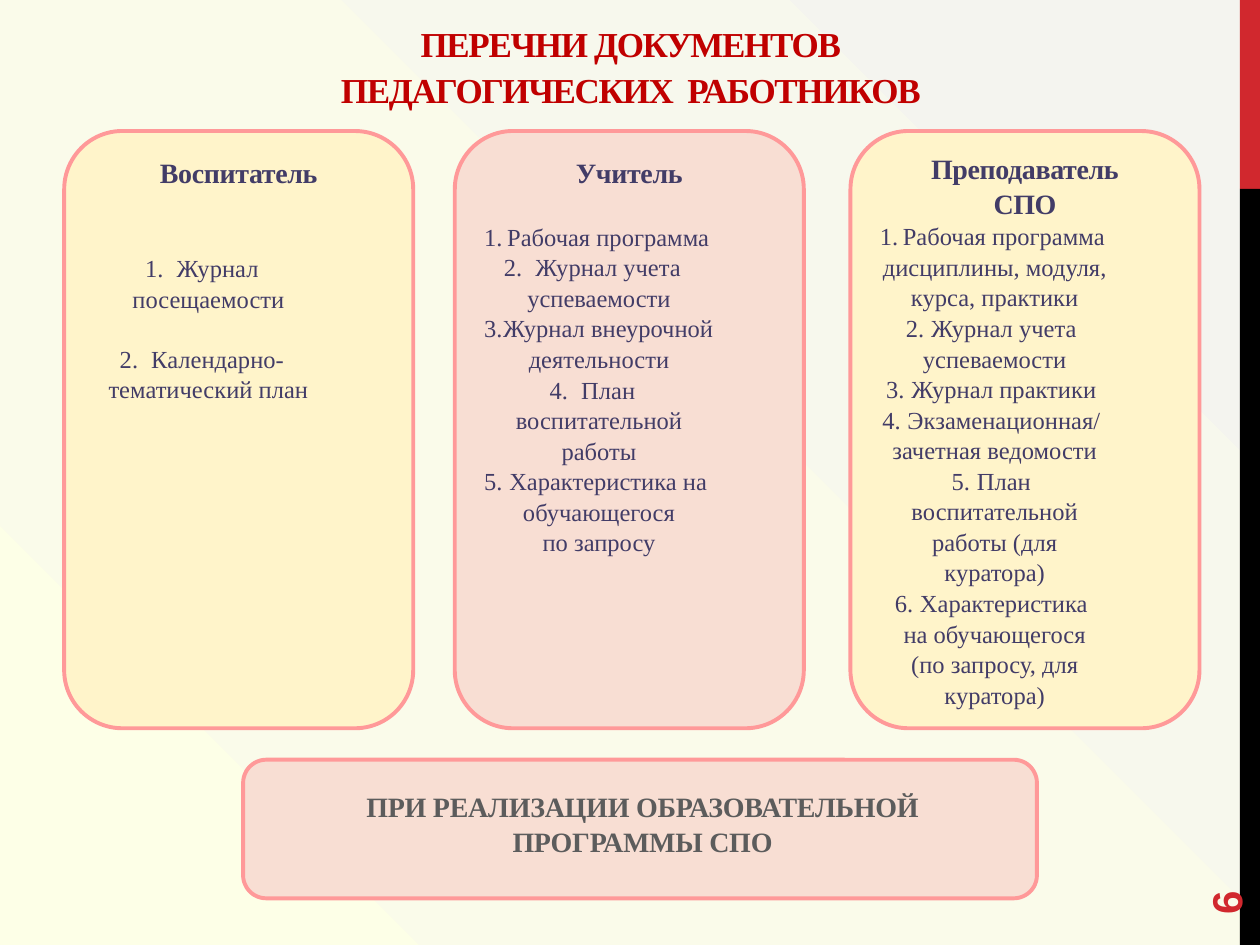
from lxml import etree
from pptx import Presentation
from pptx.dml.color import RGBColor as Color
from pptx.enum.shapes import MSO_SHAPE as Shape
from pptx.enum.text import MSO_ANCHOR as Anchor, PP_ALIGN as Align
from pptx.oxml.ns import qn
from pptx.util import Inches, Pt

# Content
TITLE = ["ПЕРЕЧНИ ДОКУМЕНТОВ", "ПЕДАГОГИЧЕСКИХ  РАБОТНИКОВ"]
CARDS = [
    dict(left=0.51, fill="yellow", anchor=Anchor.TOP, heading=["Воспитатель"],
         gap=36, item_gap=16.8, hanging=0.25,
         items=["Журнал посещаемости", "Календарно-тематический план"], tail=[]),
    dict(left=3.61, fill="pink", anchor=Anchor.TOP, heading=["Учитель"],
         gap=18, item_gap=0, hanging=0.25,
         items=["Рабочая программа", "Журнал учета успеваемости",
                "Журнал внеурочной деятельности", "План воспитательной работы",
                "Характеристика на обучающегося"],
         tail=["по запросу"]),
    dict(left=6.75, fill="yellow", anchor=Anchor.MIDDLE, heading=["Преподаватель", "СПО"],
         gap=0, item_gap=0, hanging=0.2,
         items=["Рабочая программа дисциплины, модуля, курса, практики",
                "Журнал учета успеваемости", "Журнал практики",
                "Экзаменационная/ зачетная ведомости",
                "План воспитательной работы (для куратора)", "Характеристика"],
         tail=["на обучающегося", "(по запросу, для куратора)"]),
]
FOOTER = "ПРИ РЕАЛИЗАЦИИ ОБРАЗОВАТЕЛЬНОЙ ПРОГРАММЫ СПО"
PAGE_NUMBER = "6"

# Text styles: font, size, colour, bold, letter spacing in points
THEME = dict(
    colors=dict(yellow="FFF4CA", pink="F8DED3", outline="FF9999", red="D1282E", black="000000"),
    background=[(0, "FDFFE7"), (38, "FAFBEA"), (99, "F4F4EF")],
    title=("Times New Roman", 20, "C00000", True, -0.8),
    heading=("Times New Roman", 16, "423C67", True, -0.2),
    item=("Times New Roman", 14, "423C67", False, 0),
    footer=("Times New Roman", 16, "5C5C5C", True, -0.1),
    number=("Arial", 24, "D1282E", True, 0),
)
LINE_SPACING = 1.04
CARD_TOP, CARD_WIDTH, CARD_HEIGHT = 1.04, 2.77, 4.74
ITEM_RIGHT_MARGIN, ITEM_TAB = 0.48, 0.57


def set_background(slide):
    slide.background.fill.solid()
    solid = slide.background._cSld.find(".//" + qn("a:solidFill"))
    gradient = etree.Element(qn("a:gradFill"), rotWithShape="1")
    stops = etree.SubElement(gradient, qn("a:gsLst"))
    for position, color in THEME["background"]:
        stop = etree.SubElement(stops, qn("a:gs"), pos=str(position * 1000))
        etree.SubElement(stop, qn("a:srgbClr"), val=color)
    circle = etree.SubElement(gradient, qn("a:path"))
    circle.set("path", "circle")
    etree.SubElement(circle, qn("a:fillToRect"), l="0", t="100000", r="100000", b="0")
    solid.getparent().replace(solid, gradient)


def add_block(slide, kind, box, fill, outline=None):
    shape = slide.shapes.add_shape(kind, *map(Inches, box))
    shape.shadow.inherit = False
    shape.fill.solid()
    shape.fill.fore_color.rgb = Color.from_string(THEME["colors"][fill])
    if outline:
        shape.line.color.rgb = Color.from_string(THEME["colors"][outline])
        shape.line.width = Pt(2.25)
    else:
        shape.line.fill.background()
    return shape


def add_text_box(slide, box):
    shape = slide.shapes.add_textbox(*map(Inches, box))
    shape.text_frame.word_wrap = True
    return shape


def write(frame, text, style, align=Align.CENTER, before=0):
    first = frame.paragraphs[0]
    paragraph = first if not first.runs else frame.add_paragraph()
    paragraph.alignment = align
    paragraph.line_spacing = LINE_SPACING
    paragraph.space_before = Pt(before)
    run = paragraph.add_run()
    run.text = text
    name, size, color, bold, spacing = THEME[style]
    run.font.name, run.font.size, run.font.bold = name, Pt(size), bold
    run.font.color.rgb = Color.from_string(color)
    run._r.get_or_add_rPr().set("spc", str(round(spacing * 100)))
    return paragraph


def format_item(paragraph, hanging=0, numbered=False):
    properties = paragraph._p.get_or_add_pPr()
    properties.set("marL", "0")
    properties.set("marR", str(Inches(ITEM_RIGHT_MARGIN)))
    properties.set("indent", str(-Inches(hanging)))
    if numbered:
        etree.SubElement(properties, qn("a:buAutoNum"), type="arabicPeriod")
    tabs = etree.SubElement(properties, qn("a:tabLst"))
    etree.SubElement(tabs, qn("a:tab"), pos=str(Inches(ITEM_TAB)), algn="l")


def add_card(slide, card):
    box = (card["left"], CARD_TOP, CARD_WIDTH, CARD_HEIGHT)
    frame = add_block(slide, Shape.ROUNDED_RECTANGLE, box, card["fill"], "outline").text_frame
    frame.word_wrap = True
    frame.vertical_anchor = card["anchor"]
    for line in card["heading"]:
        write(frame, line, "heading", before=0.1)
    for index, item in enumerate(card["items"]):
        before = card["item_gap"] if index else card["gap"]
        format_item(write(frame, item, "item", before=before), card["hanging"], True)
    for line in card["tail"]:
        format_item(write(frame, line, "item"))


def main():
    presentation = Presentation()
    presentation.slide_width, presentation.slide_height = Inches(10), Inches(7.5)
    slide = presentation.slides.add_slide(presentation.slide_layouts[6])
    set_background(slide)

    # Side strip and page number
    add_block(slide, Shape.RECTANGLE, (9.84, 0, 0.16, 1.5), "red")
    add_block(slide, Shape.RECTANGLE, (9.84, 1.5, 0.16, 6), "black")
    number = add_text_box(slide, (9, 6.44, 1.44, 0.4))
    number.rotation = 270
    number.text_frame.vertical_anchor = Anchor.MIDDLE
    write(number.text_frame, PAGE_NUMBER, "number", Align.LEFT)

    # Title
    frame = add_text_box(slide, (0.2, 0.16, 9.61, 0.7)).text_frame
    frame.margin_left = frame.margin_right = frame.margin_bottom = 0
    frame.margin_top = Inches(0.01)
    for line in TITLE:
        write(frame, line, "title", before=1)

    # Document lists
    for card in CARDS:
        add_card(slide, card)

    # Footer banner
    add_block(slide, Shape.ROUNDED_RECTANGLE, (1.93, 6.03, 6.3, 1.1), "pink", "outline")
    write(add_text_box(slide, (2.21, 6.21, 5.78, 0.64)).text_frame, FOOTER, "footer")

    presentation.save("out.pptx")


if __name__ == "__main__":
    main()
